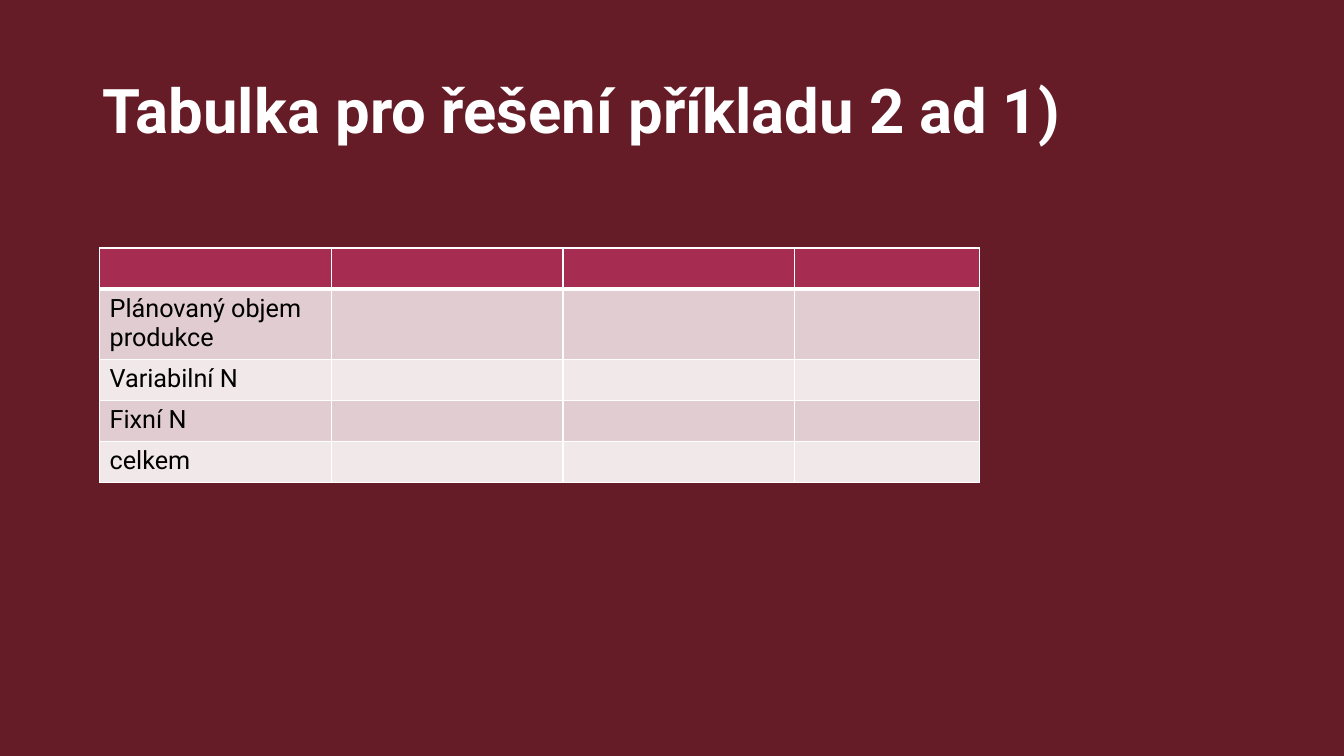
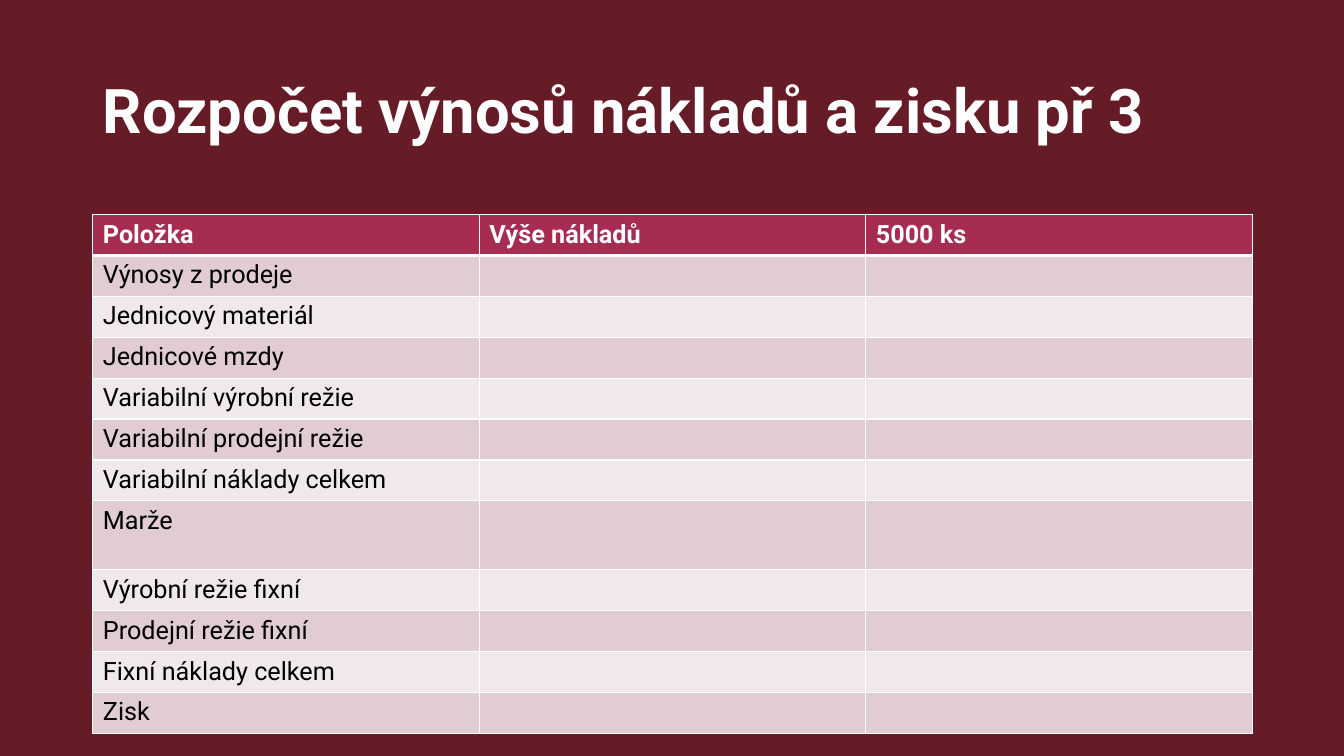
from lxml import etree
from pptx import Presentation
from pptx.dml.color import RGBColor
from pptx.enum.text import MSO_ANCHOR
from pptx.oxml import parse_xml
from pptx.oxml.ns import nsdecls
from pptx.util import Cm, Pt

COLORS = {
    "background": "651C27",
    "header": "A62C52",
    "band_dark": "E1CDD1",
    "band_light": "F1E8E9",
    "white": "FFFFFF",
    "black": "000000",
}
FONT = "Roboto"
ROW_HEIGHT, TALL_ROW_HEIGHT = 1.03, 1.74
THIN, THICK = 1, 3

SLIDES = [
    {
        "title": "Tabulka pro řešení příkladu 2 ad 1)",
        "corner": (2.51, 6.25),
        "columns": [5.84, 5.84, 5.84, 4.66],
        "header": [],
        "items": ["Plánovaný objem produkce", "Variabilní N", "Fixní N", "celkem"],
        "tall": "Plánovaný objem produkce",
    },
    {
        "title": "Rozpočet výnosů nákladů a zisku př 3",
        "corner": (2.34, 5.41),
        "columns": [9.74] * 3,
        "header": ["Položka", "Výše nákladů", "5000 ks"],
        "items": [
            "Výnosy z prodeje",
            "Jednicový materiál",
            "Jednicové mzdy",
            "Variabilní výrobní režie",
            "Variabilní prodejní režie",
            "Variabilní náklady celkem",
            "Marže",
            "Výrobní režie fixní",
            "Prodejní režie fixní",
            "Fixní náklady celkem",
            "Zisk",
        ],
        "tall": "Marže",
    },
]


def rgb(name):
    return RGBColor.from_string(COLORS[name])


def write_text(frame, text, size=18, color="black", bold=False, spacing=1.0):
    frame.word_wrap = True
    paragraph = frame.paragraphs[0]
    paragraph.line_spacing = spacing
    run = paragraph.add_run()
    run.text = text
    run.font.name = FONT
    run.font.size = Pt(size)
    run.font.bold = bold
    run.font.color.rgb = rgb(color)


def add_title(slide, text):
    title = slide.shapes.add_textbox(Cm(2.34), Cm(1.01), Cm(29.21), Cm(3.68))
    title.text_frame.vertical_anchor = MSO_ANCHOR.MIDDLE
    write_text(title.text_frame, text, size=44, color="white", bold=True, spacing=0.9)


def set_borders(cell, top, bottom):
    """Draw white cell edges; top and bottom are widths in points."""
    properties = cell._tc.get_or_add_tcPr()
    edges = [("lnL", THIN), ("lnR", THIN), ("lnT", top), ("lnB", bottom)]
    for position, (edge, width) in enumerate(edges):
        line = parse_xml(f'<a:{edge} {nsdecls("a")} w="{Pt(width)}"><a:solidFill/></a:{edge}>')
        etree.SubElement(line[0], line[0].tag.replace("solidFill", "srgbClr"), val=COLORS["white"])
        properties.insert(position, line)


def add_budget_table(slide, corner, columns, header, items, tall):
    rows = [header] + [[item] for item in items]
    heights = [TALL_ROW_HEIGHT if tall in row else ROW_HEIGHT for row in rows]
    left, top = corner
    table = slide.shapes.add_table(
        len(rows), len(columns), Cm(left), Cm(top), Cm(sum(columns)), Cm(sum(heights))
    ).table
    for column, width in zip(table.columns, columns):
        column.width = Cm(width)
    for index, (row, height, texts) in enumerate(zip(table.rows, heights, rows)):
        row.height = Cm(height)
        is_header = index == 0
        fill = "header" if is_header else "band_dark" if index % 2 else "band_light"
        for position, cell in enumerate(row.cells):
            cell.fill.solid()
            cell.fill.fore_color.rgb = rgb(fill)
            set_borders(cell, THICK if index == 1 else THIN, THICK if is_header else THIN)
            if position < len(texts):
                write_text(cell.text_frame, texts[position],
                           color="white" if is_header else "black", bold=is_header)


def main():
    prs = Presentation()
    prs.slide_width, prs.slide_height = Cm(33.87), Cm(19.05)
    background = prs.slide_master.background.fill
    background.solid()
    background.fore_color.rgb = rgb("background")
    for content in SLIDES:
        slide = prs.slides.add_slide(prs.slide_layouts[6])
        add_title(slide, content["title"])
        add_budget_table(slide, content["corner"], content["columns"],
                         content["header"], content["items"], content["tall"])
    prs.save("out.pptx")


if __name__ == "__main__":
    main()
